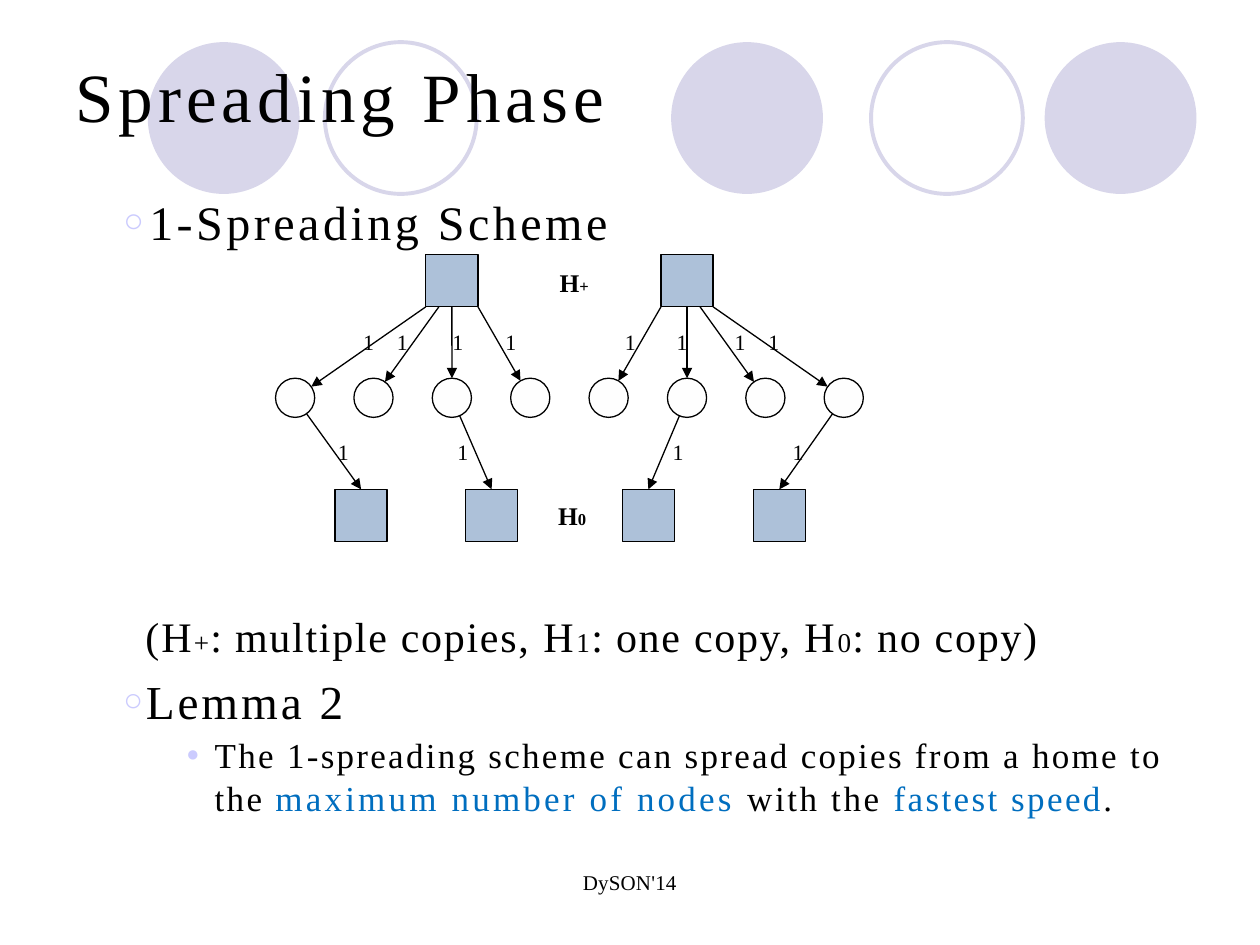
import math
from dataclasses import dataclass

from lxml import etree
from pptx import Presentation
from pptx.dml.color import RGBColor
from pptx.enum.shapes import MSO_CONNECTOR, MSO_SHAPE
from pptx.enum.text import MSO_ANCHOR, MSO_AUTO_SIZE, PP_ALIGN
from pptx.oxml.ns import qn
from pptx.util import Cm, Pt

OVAL = MSO_SHAPE.OVAL
SQUARE = MSO_SHAPE.RECTANGLE
STRAIGHT = MSO_CONNECTOR.STRAIGHT
TOP_ANCHOR = MSO_ANCHOR.TOP
FIXED_SIZE = MSO_AUTO_SIZE.NONE
LEFT = PP_ALIGN.LEFT
TOP_SIDE, BOTTOM_SIDE = 0, 2


@dataclass(frozen=True)
class Theme:
    font: str = "Times New Roman"
    bullet_font: str = "Arial"
    ink: str = "000000"
    accent: str = "006EBF"
    bullet: str = "CBCBFE"
    decoration: str = "D8D6EA"
    home: str = "ADC1D9"
    node: str = "FEFEFE"
    title: float = 39.5
    heading: float = 27.5
    lemma: float = 27
    legend: float = 24
    legend_sub: float = 15.5
    body: float = 20
    home_label: float = 14.5
    home_sub: float = 9.5
    edge_label: float = 12.5
    footer: float = 12
    hairline: float = 0.75
    ring: float = 2.25


@dataclass(frozen=True)
class Span:
    text: str
    size: float
    spacing: float = 0
    color: str = Theme.ink
    bold: bool = False


class SlideBuilder:
    def __init__(self, page, theme):
        self.page = page
        self.theme = theme

    def fill_frame(self, box, spans):
        frame = box.text_frame
        frame.word_wrap = True
        frame.auto_size = FIXED_SIZE
        frame.vertical_anchor = TOP_ANCHOR
        frame.margin_left = frame.margin_right = 0
        frame.margin_top = frame.margin_bottom = 0
        para = frame.paragraphs[0]
        para.alignment = LEFT
        for span in spans:
            run = para.add_run()
            run.text = span.text
            run.font.name = self.theme.font
            run.font.size = Pt(span.size)
            run.font.bold = span.bold
            run.font.color.rgb = RGBColor.from_string(span.color)
            run.font._element.set("spc", str(round(span.spacing * 100)))
        return para

    def title(self, left, top, width, height, spans):
        box = self.page.shapes.title
        box.left, box.top, box.width, box.height = Cm(left), Cm(top), Cm(width), Cm(height)
        self.fill_frame(box, spans).line_spacing = 1.0
        self.page.shapes._spTree.append(box._element)

    def text(self, left, top, width, height, spans):
        box = self.page.shapes.add_textbox(Cm(left), Cm(top), Cm(width), Cm(height))
        return self.fill_frame(box, spans)

    def bullet(self, para, symbol, indent, percent):
        properties = para._element.get_or_add_pPr()
        properties.set("marL", str(Cm(indent)))
        properties.set("indent", str(-Cm(indent)))
        color = etree.SubElement(properties, qn("a:buClr"))
        etree.SubElement(color, qn("a:srgbClr"), val=self.theme.bullet)
        etree.SubElement(properties, qn("a:buSzPct"), val=str(percent * 1000))
        etree.SubElement(properties, qn("a:buFont"), typeface=self.theme.bullet_font)
        etree.SubElement(properties, qn("a:buChar"), char=symbol)

    def shape(self, kind, center_x, center_y, size, fill=None, line=None, weight=Theme.hairline):
        shape = self.page.shapes.add_shape(
            kind, Cm(center_x - size / 2), Cm(center_y - size / 2), Cm(size), Cm(size))
        shape.shadow.inherit = False
        if fill:
            shape.fill.solid()
            shape.fill.fore_color.rgb = RGBColor.from_string(fill)
        else:
            shape.fill.background()
        if line:
            shape.line.color.rgb = RGBColor.from_string(line)
            shape.line.width = Pt(weight)
        else:
            shape.line.fill.background()
        return shape

    def arrow(self, start, end):
        arrow = self.page.shapes.add_connector(STRAIGHT, *(Cm(value) for value in (*start, *end)))
        arrow.line.color.rgb = RGBColor.from_string(self.theme.ink)
        arrow.line.width = Pt(self.theme.hairline)
        properties = arrow._element.spPr
        etree.SubElement(properties.find(qn("a:ln")), qn("a:tailEnd"),
                         type="triangle", w="med", len="med")
        etree.SubElement(properties, qn("a:effectLst"))
        return arrow


def rim_point(center, toward, radius):
    distance = math.dist(center, toward)
    return tuple(c + (t - c) * radius / distance for c, t in zip(center, toward))


def draw_decoration(builder, theme):
    for center_x, filled in ((4.51, True), (8.08, False), (15.06, True), (19.09, False), (22.59, True)):
        builder.shape(OVAL, center_x, 2.38, 3.06,
                      fill=theme.decoration if filled else None,
                      line=None if filled else theme.decoration, weight=theme.ring)


def draw_spreading(builder, theme):
    home_size, node_size = 1.05, 0.79
    upper_y, node_y, lower_y = 5.66, 8.02, 10.39
    node_centers = [(5.95 + 1.58 * index, node_y) for index in range(8)]

    def home(center_x, center_y):
        return builder.shape(SQUARE, center_x, center_y, home_size, theme.home, theme.ink)

    nodes = [builder.shape(OVAL, *center, node_size, theme.node, theme.ink)
             for center in node_centers]

    hub_exits = ((2, ((0, -0.5), (1, -0.25), (2, 0), (3, 0.5))),
                 (5, ((4, -0.5), (5, 0), (6, 0.25), (7, 0.5))))
    for hub_index, exits in hub_exits:
        hub_x = node_centers[hub_index][0]
        hub = home(hub_x, upper_y)
        for node_index, offset in exits:
            start = (hub_x + offset * home_size, upper_y + home_size / 2)
            end = rim_point(node_centers[node_index], start, node_size / 2)
            arrow = builder.arrow(start, end)
            if offset == 0:
                arrow.begin_connect(hub, BOTTOM_SIDE)
                arrow.end_connect(nodes[node_index], TOP_SIDE)

    for node_index, home_x in ((0, 7.28), (2, 9.91), (5, 13.07), (7, 15.71)):
        target = home(home_x, lower_y)
        end = (home_x, lower_y - home_size / 2)
        arrow = builder.arrow(rim_point(node_centers[node_index], end, node_size / 2), end)
        arrow.end_connect(target, TOP_SIDE)

    label_rows = ((6.63, (7.32, 8, 9.12, 10.19, 12.6, 13.64, 14.81, 15.49)),
                  (8.84, (6.81, 9.22, 13.56, 15.98)))
    for top, lefts in label_rows:
        for left in lefts:
            builder.text(left, top, 0.4, 0.55, [Span("1", theme.edge_label)])

    for left, top, subscript in ((11.28, 5.38, "+"), (11.25, 10.08, "0")):
        builder.text(left, top, 1.2, 0.65, [
            Span("H", theme.home_label, 0.1, bold=True),
            Span(subscript, theme.home_sub, bold=True)])


def draw_words(builder, theme):
    builder.title(1.52, 1.07, 13, 1.7, [Span("Spreading Phase", theme.title, 2.9)])
    heading = builder.text(2.49, 3.87, 12, 1.2, [Span("1-Spreading Scheme", theme.heading, 2)])
    builder.bullet(heading, "○", 0.52, 71)

    legend = []
    for subscript, meaning in (("+", "multiple copies, "), ("1", "one copy, "), ("0", "no copy)")):
        legend += [Span("H" if legend else "(H", theme.legend, 1.6 if legend else 1.2),
                   Span(subscript, theme.legend_sub, 0.8),
                   Span(": ", theme.legend, 0.7),
                   Span(meaning, theme.legend, 1)]
    builder.text(2.93, 12.31, 20, 1.1, legend)

    lemma = builder.text(2.49, 13.55, 8, 1.2, [Span("Lemma 2", theme.lemma, 1.7)])
    builder.bullet(lemma, "○", 0.45, 69)

    statement = builder.text(3.76, 14.77, 20, 1.9, [
        Span("The 1-spreading scheme can spread copies from a home to the ", theme.body, 1.3),
        Span("maximum number of nodes ", theme.body, 1.8, theme.accent),
        Span("with the ", theme.body, 1.5),
        Span("fastest speed", theme.body, 1.4, theme.accent),
        Span(".", theme.body, 0.9)])
    statement.line_spacing = Pt(24.5)
    builder.bullet(statement, "●", 0.57, 62)
    builder.text(11.75, 17.53, 3, 0.55, [Span("DySON'14", theme.footer, 0.1)])


def main():
    deck = Presentation()
    deck.slide_width, deck.slide_height = Cm(25.4), Cm(19.05)
    theme = Theme()
    page = deck.slides.add_slide(deck.slide_layouts[5])
    builder = SlideBuilder(page, theme)
    draw_decoration(builder, theme)
    draw_spreading(builder, theme)
    draw_words(builder, theme)
    deck.save("out.pptx")


if __name__ == "__main__":
    main()
